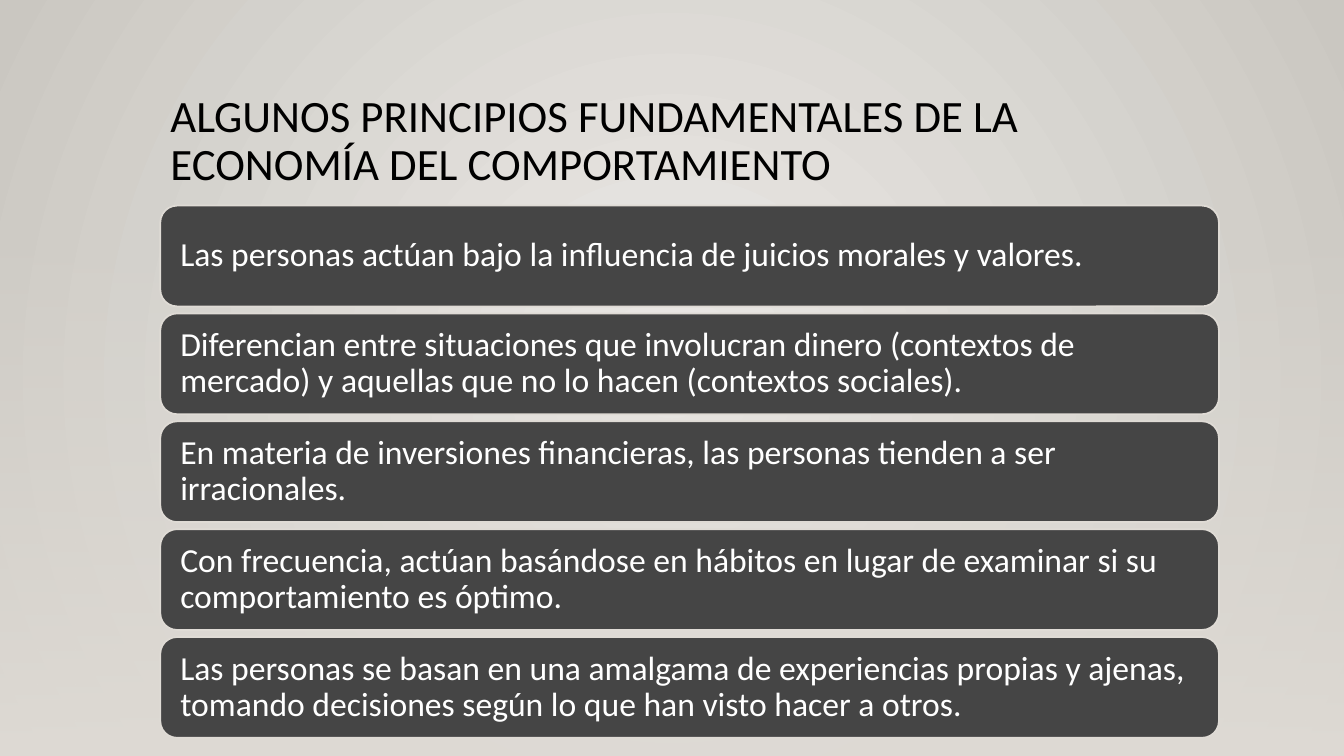
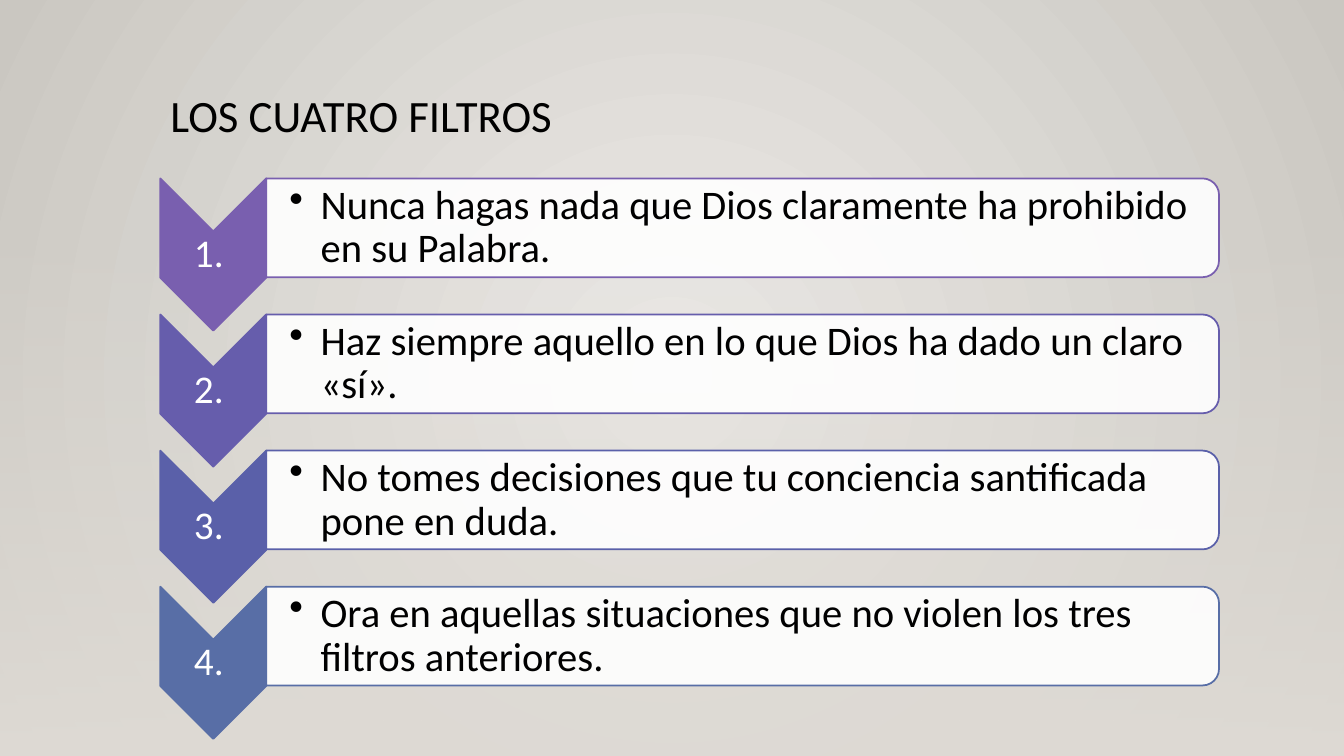
"""Build two slides: principles of behavioural economics and the four filters."""
from dataclasses import dataclass

from pptx import Presentation
from pptx.dml.color import RGBColor
from pptx.enum.shapes import MSO_SHAPE
from pptx.enum.text import MSO_ANCHOR, MSO_AUTO_SIZE, PP_ALIGN
from pptx.oxml import parse_xml
from pptx.oxml.ns import nsdecls, qn
from pptx.util import Pt

ROUND_RECT = MSO_SHAPE.ROUNDED_RECTANGLE
ROUND_TOP = MSO_SHAPE.ROUND_2_SAME_RECTANGLE
CHEVRON = MSO_SHAPE.CHEVRON
RECT = MSO_SHAPE.RECTANGLE
TOP, MIDDLE = MSO_ANCHOR.TOP, MSO_ANCHOR.MIDDLE
LEFT, CENTER = PP_ALIGN.LEFT, PP_ALIGN.CENTER
NO_FIT = MSO_AUTO_SIZE.NONE
TITLE_ONLY = 5
EMU_PER_PX = 9144
SLIDE_W, SLIDE_H = 1333, 750
CONTENT_X, CONTENT_W = 159, 1050


@dataclass(frozen=True)
class Theme:
    """Colours, font and type sizes of the deck."""
    font: str = "Calibri"
    glow: str = "ECEAE7"
    edge: str = "CAC7C1"
    sand: str = "DFDBD5"
    bar: str = "454545"
    black: str = "000000"
    white: str = "FFFFFF"
    filters: tuple = ("795FAF", "665DAC", "5A60A9", "586EA6")
    title_size: int = 32
    bar_size: int = 24
    number_size: int = 28
    filter_size: int = 29
    line_width: float = 1.25


THEME = Theme()

PRINCIPLES = (
    "Las personas actúan bajo la influencia de juicios morales y valores.",
    "Diferencian entre situaciones que involucran dinero (contextos de mercado) "
    "y aquellas que no lo hacen (contextos sociales).",
    "En materia de inversiones financieras, las personas tienden a ser irracionales.",
    "Con frecuencia, actúan basándose en hábitos en lugar de examinar si su "
    "comportamiento es óptimo.",
    "Las personas se basan en una amalgama de experiencias propias y ajenas, "
    "tomando decisiones según lo que han visto hacer a otros.",
)
FILTERS = (
    "Nunca hagas nada que Dios claramente ha prohibido en su Palabra.",
    "Haz siempre aquello en lo que Dios ha dado un claro «sí».",
    "No tomes decisiones que tu conciencia santificada pone en duda.",
    "Ora en aquellas situaciones que no violen los tres filtros anteriores.",
)


def px(*lengths):
    """Turn px lengths into EMU."""
    return [round(n * EMU_PER_PX) for n in lengths]


def rgb(color):
    """Turn a hex string into a colour."""
    return RGBColor.from_string(color)


def apply(obj, **values):
    """Set attributes from format values."""
    for name, value in values.items():
        setattr(obj, name, value)


def set_gradient(fill, start, end):
    """Give a fill two gradient stops."""
    fill.gradient()
    for stop, color in zip(fill.gradient_stops, (start, end)):
        stop.color.rgb = rgb(color)


def set_alpha(sp, percent):
    """Make the first colour of a shape translucent."""
    color = next(sp.element.iter(qn("a:srgbClr")))
    color.append(parse_xml(f'<a:alpha {nsdecls("a")} val="{percent * 1000}"/>'))


def write(sp, text, size, color, insets, align=LEFT, anchor=MIDDLE):
    """Write one formatted paragraph and return it."""
    tf = sp.text_frame
    sides = ("margin_left", "margin_top", "margin_right", "margin_bottom")
    apply(tf, word_wrap=True, auto_size=NO_FIT, vertical_anchor=anchor,
          **dict(zip(sides, px(*insets))))
    p = tf.paragraphs[0]
    apply(p, alignment=align, line_spacing=0.9)
    r = p.add_run()
    r.text = text
    apply(r.font, name=THEME.font, size=Pt(size))
    r.font.color.rgb = rgb(color)
    return p


def add_box(s, kind, frame, fill, line):
    """Add a filled and outlined shape."""
    sp = s.shapes.add_shape(kind, *px(*frame))
    sp.shadow.inherit = False
    sp.fill.solid()
    sp.fill.fore_color.rgb = rgb(fill)
    sp.line.color.rgb = rgb(line)
    sp.line.width = Pt(THEME.line_width)
    return sp


def add_turned(s, kind, frame, fill, line):
    """Add a shape turned by 90 degrees that covers the given frame."""
    x, y, w, h = frame
    shift = (w - h) / 2
    sp = add_box(s, kind, (x + shift, y - shift, h, w), fill, line)
    sp.rotation = 90
    return sp


def add_bullet(p, indent):
    """Give a paragraph a hanging bullet."""
    pPr = p._p.get_or_add_pPr()
    margin, = px(indent)
    pPr.set("marL", str(margin))
    pPr.set("indent", str(-margin))
    pPr.append(parse_xml(f'<a:buChar {nsdecls("a")} char="•"/>'))


def style_master(prs, s):
    """Put the radial background and the fading band on the master."""
    master = prs.slide_master
    set_gradient(master.background.fill, THEME.glow, THEME.edge)
    lin = next(master.element.iter(qn("a:lin")))
    lin.getparent().replace(lin, parse_xml(
        f'<a:path {nsdecls("a")} path="circle">'
        '<a:fillToRect l="50000" t="50000" r="50000" b="50000"/></a:path>'))
    band = s.shapes.add_shape(RECT, *px(0, 221, SLIDE_W, SLIDE_H - 221))
    band.shadow.inherit = False
    band.line.fill.background()
    set_gradient(band.fill, THEME.sand, THEME.sand)
    band.fill.gradient_angle = 270
    set_alpha(band, 0)
    next(band.element.iter(qn("p:cNvPr"))).set("id", "20")
    master.shapes.element.insert(2, band.element)


def add_slide(prs, title):
    """Add a slide with its title."""
    s = prs.slides.add_slide(prs.slide_layouts[TITLE_ONLY])
    sp = s.shapes.title
    frame = px(CONTENT_X, 88, CONTENT_W, 115)
    apply(sp, **dict(zip(("left", "top", "width", "height"), frame)))
    write(sp, title, THEME.title_size, THEME.black, (10, 5, 10, 5), anchor=TOP)
    return s


def add_principle(s, y, text):
    """Add a dark bar with its text."""
    sp = add_box(s, ROUND_RECT, (CONTENT_X, y, CONTENT_W, 100), THEME.bar, THEME.sand)
    write(sp, text, THEME.bar_size, THEME.white, (15, 15, 15, 15))


def add_filter(s, y, number, text, color):
    """Add a numbered chevron and its bulleted box."""
    chevron_w = 105
    x = CONTENT_X + chevron_w
    add_turned(s, CHEVRON, (CONTENT_X, y, chevron_w, 151), color, color)
    label = s.shapes.add_textbox(*px(CONTENT_X, y + 53, chevron_w, 45))
    write(label, f"{number}. ", THEME.number_size, THEME.white, (2, 2, 2, 2), CENTER)
    panel = add_turned(s, ROUND_TOP, (x, y, CONTENT_W - chevron_w, 98), THEME.white, color)
    set_alpha(panel, 90)
    body = s.shapes.add_textbox(*px(x, y + 5, 940, 88))
    p = write(body, text, THEME.filter_size, THEME.black, (23, 2, 2, 2))
    add_bullet(p, 31)


def main():
    """Build and save the deck."""
    prs = Presentation()
    prs.slide_width, prs.slide_height = px(SLIDE_W, SLIDE_H)

    s = add_slide(prs, "ALGUNOS PRINCIPIOS FUNDAMENTALES DE LA ECONOMÍA DEL COMPORTAMIENTO")
    style_master(prs, s)
    for i, text in enumerate(PRINCIPLES):
        add_principle(s, 204 + 107 * i, text)

    s = add_slide(prs, "LOS CUATRO FILTROS")
    for i, (text, color) in enumerate(zip(FILTERS, THEME.filters)):
        add_filter(s, 177 + 135 * i, i + 1, text, color)

    prs.save("out.pptx")


if __name__ == "__main__":
    main()
